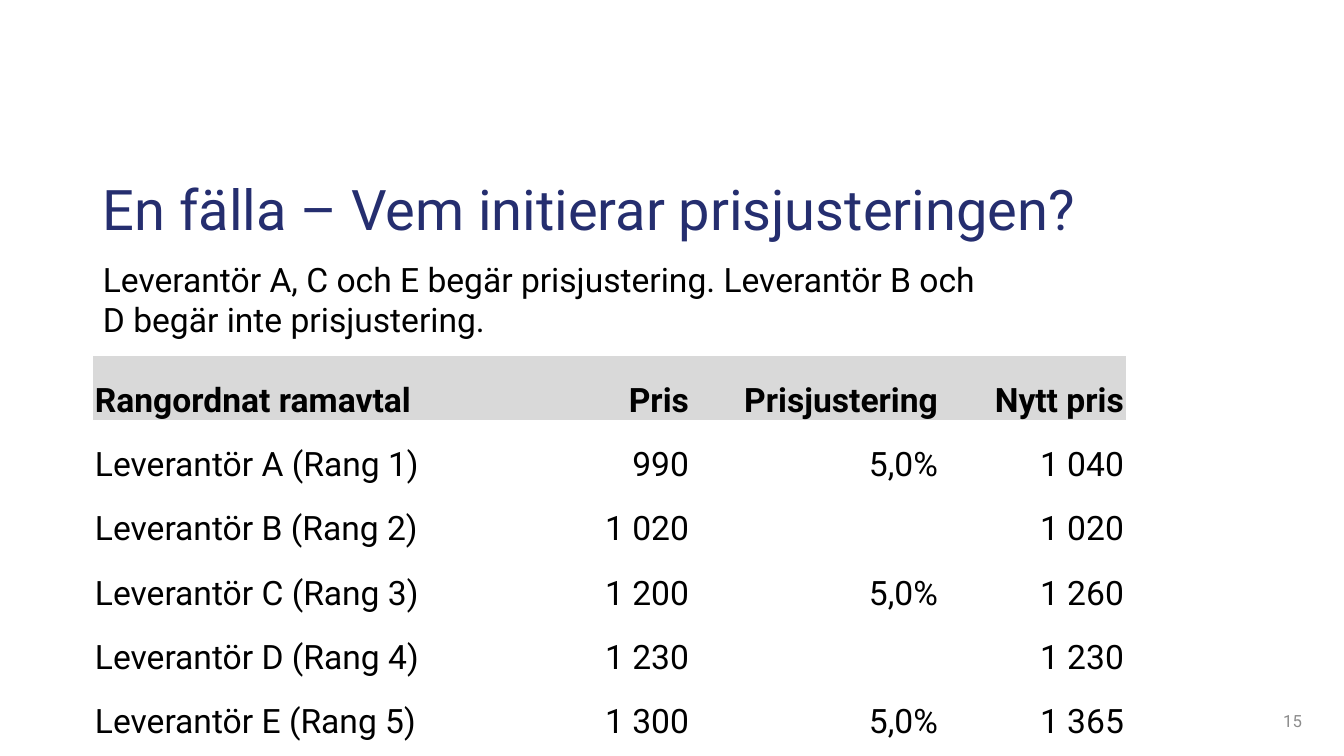
from pptx import Presentation
from pptx.dml.color import RGBColor
from pptx.enum.text import MSO_ANCHOR, PP_ALIGN
from pptx.oxml.ns import qn
from pptx.util import Pt

SCALE = 914400 / 100.8  # EMU per px
FONT = "Roboto"
NAVY = RGBColor(0x25, 0x2E, 0x6F)
BLACK = RGBColor(0, 0, 0)
GREY = RGBColor(0x8C, 0x8C, 0x8C)
BAND = RGBColor(0xD9, 0xD9, 0xD9)
WHITE = RGBColor(0xFF, 0xFF, 0xFF)
NO_GRID = "{2D5ABB26-0587-4C30-8999-92F81FD0307C}"

WIDTHS = [412, 186, 249, 186]
ROWS = [
    ["Rangordnat ramavtal", "Pris", "Prisjustering", "Nytt pris"],
    ["Leverantör A (Rang 1)", "990", "5,0%", "1 040"],
    ["Leverantör B (Rang 2)", "1 020", "", "1 020"],
    ["Leverantör C (Rang 3)", "1 200", "5,0%", "1 260"],
    ["Leverantör D (Rang 4)", "1 230", "", "1 230"],
    ["Leverantör E (Rang 5)", "1 300", "5,0%", "1 365"],
]


def px(count):
    return round(count * SCALE)


def style(para, size, color, align=PP_ALIGN.LEFT, bold=False):
    para.alignment = align
    font = para.font
    font.name, font.size, font.bold = FONT, Pt(size), bold
    font.color.rgb = color


def add_text(slide, box, text, size, color, anchor, align=PP_ALIGN.LEFT):
    frame = slide.shapes.add_textbox(*map(px, box)).text_frame
    frame.word_wrap = True
    frame.vertical_anchor = anchor
    para = frame.paragraphs[0]
    para.text = text
    style(para, size, color, align)
    return para


def fill_cell(cell, text, head, first):
    cell.vertical_anchor = MSO_ANCHOR.BOTTOM
    cell.margin_left = cell.margin_right = cell.margin_top = px(2)
    cell.margin_bottom = 0
    if head:
        cell.fill.solid()
        cell.fill.fore_color.rgb = BAND
    else:
        cell.fill.background()
    cell.text = text
    align = PP_ALIGN.LEFT if first else PP_ALIGN.RIGHT
    style(cell.text_frame.paragraphs[0], 24, BLACK, align, head)


def add_prices(slide, left, top, height):
    box = map(px, (left, top, sum(WIDTHS), height))
    table = slide.shapes.add_table(len(ROWS), len(WIDTHS), *box).table
    table.horz_banding = False
    table._tbl.tblPr.find(qn("a:tableStyleId")).text = NO_GRID
    for col, width in zip(table.columns, WIDTHS):
        col.width = px(width)
    for r, row in enumerate(ROWS):
        for c, text in enumerate(row):
            fill_cell(table.cell(r, c), text, r == 0, c == 0)


def main():
    deck = Presentation()
    deck.slide_width, deck.slide_height = px(1344), px(756)
    slide = deck.slides.add_slide(deck.slide_layouts[6])
    slide.background.fill.solid()
    slide.background.fill.fore_color.rgb = WHITE

    # Title
    title = add_text(slide, (93, 110, 1033, 138),
                     "En fälla – Vem initierar prisjusteringen?",
                     40, NAVY, MSO_ANCHOR.BOTTOM)
    title.line_spacing = 0.9

    # Page number
    page = add_text(slide, (1010, 701, 302, 40), "15", 12, GREY,
                    MSO_ANCHOR.MIDDLE, PP_ALIGN.RIGHT)
    page.space_after = Pt(6)

    # Price table
    add_prices(slide, 93, 356, 386)

    # Lead text
    add_text(slide, (93, 254, 917, 92),
             "Leverantör A, C och E begär prisjustering. "
             "Leverantör B och D begär inte prisjustering.",
             24, BLACK, MSO_ANCHOR.TOP)

    deck.save("out.pptx")


if __name__ == "__main__":
    main()
